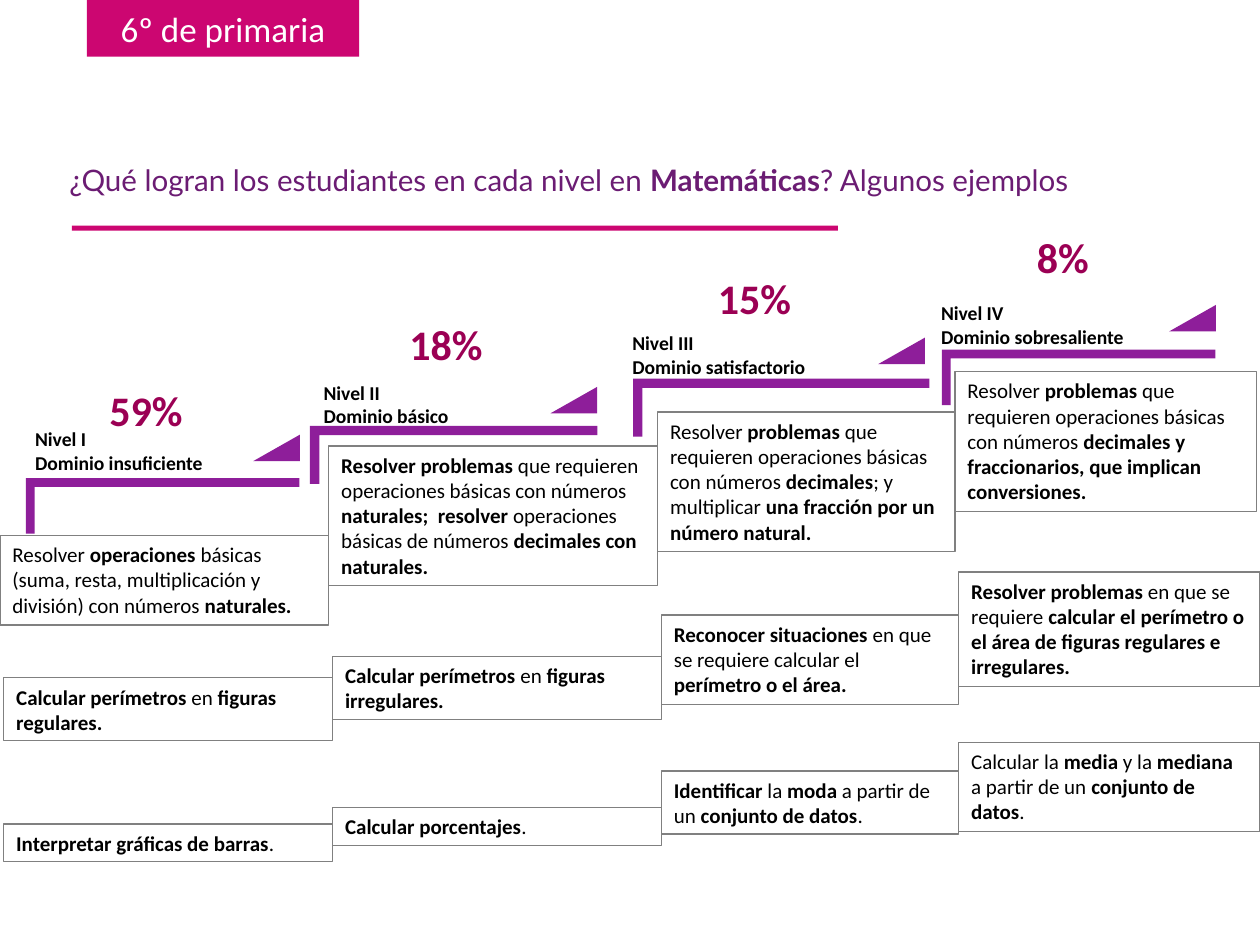
from itertools import accumulate

from pptx import Presentation
from pptx.dml.color import RGBColor
from pptx.enum.shapes import MSO_SHAPE
from pptx.enum.text import MSO_ANCHOR, MSO_AUTO_SIZE, PP_ALIGN
from pptx.util import Inches, Pt

PINK = RGBColor(0xCC, 0x06, 0x71)
WINE = RGBColor(0x9B, 0x00, 0x54)
PLUM = RGBColor(0x6B, 0x1C, 0x73)
PURPLE = RGBColor(0x8E, 0x1E, 0x9A)
GRAY = RGBColor(0x80, 0x80, 0x80)
BLACK = RGBColor(0, 0, 0)
WHITE = RGBColor(0xFF, 0xFF, 0xFF)

COLS, ROWS = 100, 75  # grid cells across and down the slide


class Board:
    """Holds the style and the current slide; lengths are grid cells."""

    styles = {
        "tag": ({"name": "Calibri", "size": Pt(20)}, WHITE),
        "title": ({"name": "Lato", "size": Pt(16.9)}, PLUM),
        "label": ({"name": "Calibri", "size": Pt(11.2), "bold": True}, BLACK),
        "share": ({"name": "Calibri", "size": Pt(24), "bold": True}, WINE),
        "body": ({"name": "Calibri", "size": Pt(12)}, BLACK),
    }

    def __init__(self, deck):
        self.slide = deck.slides.add_slide(deck.slide_layouts[5])
        self.col = deck.slide_width / COLS
        self.row = deck.slide_height / ROWS

    def place(self, x, y, w, h):
        return [round(n) for n in
                (x * self.col, y * self.row, w * self.col, h * self.row)]

    def letter(self, shape, text, style, align=PP_ALIGN.LEFT, **frame):
        """Fill a shape with text; parts between asterisks are bold."""
        fmt, color = self.styles[style]
        body = shape.text_frame
        frame = {"word_wrap": True, "vertical_anchor": MSO_ANCHOR.TOP,
                 "auto_size": MSO_AUTO_SIZE.SHAPE_TO_FIT_TEXT, **frame}
        for key, val in frame.items():
            setattr(body, key, val)
        for i, line in enumerate(text.split("\n")):
            para = body.add_paragraph() if i else body.paragraphs[0]
            para.alignment = align
            for j, part in enumerate(line.split("*")):
                if not part:
                    continue
                run = para.add_run()
                run.text = part
                for key, val in {"bold": j % 2 == 1, **fmt}.items():
                    setattr(run.font, key, val)
                run.font.color.rgb = color

    def title(self, text, *box):
        shape = self.slide.shapes.title
        for key, val in zip(("left", "top", "width", "height"),
                            self.place(*box)):
            setattr(shape, key, val)
        self.letter(shape, text, "title", auto_size=MSO_AUTO_SIZE.NONE)
        shape.text_frame.paragraphs[0].line_spacing = 0.9

    def shape(self, kind, box, fill=None, line=None, adjust=()):
        shape = self.slide.shapes.add_shape(kind, *self.place(*box))
        shape.shadow.inherit = False
        for i, val in enumerate(adjust):
            shape.adjustments[i] = val
        if fill is None:
            shape.fill.background()
        else:
            shape.fill.solid()
            shape.fill.fore_color.rgb = fill
        if line is None:
            shape.line.fill.background()
        else:
            shape.line.color.rgb = line
            shape.line.width = Pt(0.75)
        return shape

    def text(self, text, style, *box, **frame):
        shape = self.slide.shapes.add_textbox(*self.place(*box))
        self.letter(shape, text, style, **frame)

    def step(self, x, y, w, h):
        """An L shape turned a quarter, so that its frame is swapped."""
        box = (x + (w - h) / 2, y + (h - w) / 2, h, w)
        self.shape(MSO_SHAPE.CORNER, box, PURPLE,
                   adjust=(0.16, 0.16)).rotation = 90

    def flag(self, x, y):
        self.shape(MSO_SHAPE.ISOSCELES_TRIANGLE, (x, y, 3.7, 2.1), PURPLE,
                   adjust=(1,))

    def card(self, text, *box):
        shape = self.shape(MSO_SHAPE.RECTANGLE, box, line=GRAY)
        self.letter(shape, text, "body")


# Name, share, step box, flag place, label box, share box
LEVELS = [
    ("Nivel I\nDominio insuficiente", "59%", (2.05, 37.95, 21.7, 4.4),
     (20.1, 34.5), (1.8, 33.4, 18.9, 4.8), (7.7, 30, 8.6, 5)),
    ("Nivel II\nDominio básico", "18%", (24.6, 33.8, 22.8, 4.6),
     (43.7, 30.7), (24.7, 29.7, 16.3, 4.8), (31.5, 24.8, 8.6, 5)),
    ("Nivel III\nDominio satisfactorio", "15%", (50.25, 30.05, 23.5, 4.6),
     (69.7, 26.8), (49.2, 25.8, 19.8, 4.8), (56, 21.1, 8.6, 5)),
    ("Nivel IV\nDominio sobresaliente", "8%", (74.75, 27.75, 21.7, 4.4),
     (92.8, 24.2), (73.7, 23.4, 21.8, 4.8), (81.3, 17.9, 6.9, 5)),
]

# Each band: shift to the right, then top, height and text per level
WIDTHS = (26.1, 26.1, 23.6, 23.9)
BANDS = [
    (0, [
        (42.5, 7.1, "Resolver *operaciones *básicas (suma, resta, "
         "multiplicación y división) con números *naturales.*"),
        (35.4, 11.1, "*Resolver problemas* que requieren operaciones básicas "
         "con números *naturales;  resolver* operaciones básicas de números "
         "*decimales con naturales.*"),
        (32.7, 11.1, "Resolver *problemas *que requieren operaciones básicas "
         "con números *decimales*; y multiplicar *una fracción por un "
         "número natural.*"),
        (29.5, 11.1, "Resolver *problemas* que requieren operaciones básicas "
         "con números *decimales y fraccionarios, que implican "
         "conversiones.*"),
    ]),
    (0.3, [
        (53.8, 5, "*Calcular perímetros *en *figuras regulares.*"),
        (52.1, 5, "*Calcular perímetros *en *figuras irregulares.*"),
        (48.8, 7.1, "*Reconocer situaciones *en que se requiere calcular el "
         "*perímetro o el área.*"),
        (45.4, 9.1, "*Resolver problemas* en que se requiere* calcular el "
         "perímetro o el área de figuras regulares e irregulares.*"),
    ]),
    (0.3, [
        (65.4, 3, "*Interpretar gráficas de barras*."),
        (64.1, 3, "*Calcular porcentajes*."),
        (61.2, 5, "*Identificar* la *moda* a partir de un "
         "*conjunto de datos*."),
        (58.9, 7.1, "Calcular la *media* y la *mediana* a partir de un "
         "*conjunto de datos*."),
    ]),
]


def main():
    deck = Presentation()
    deck.slide_width, deck.slide_height = Inches(10), Inches(7.5)
    board = Board(deck)

    # Heading: grade tag, question and rule
    tag = board.shape(MSO_SHAPE.RECTANGLE, (6.9, 0, 21.6, 4.5), PINK)
    board.letter(tag, "6º de primaria", "tag", PP_ALIGN.CENTER,
                 vertical_anchor=MSO_ANCHOR.MIDDLE,
                 auto_size=MSO_AUTO_SIZE.NONE)
    board.title("¿Qué logran los estudiantes en cada nivel en *Matemáticas*? "
                "Algunos ejemplos", 4.5, 12.7, 88.3, 5.2)
    board.shape(MSO_SHAPE.RECTANGLE, (5.7, 17.9, 60.8, 0.4), PINK)

    # Staircase of levels
    for name, share, step, flag, label, spot in LEVELS:
        board.step(*step)
        board.flag(*flag)
        board.text(name, "label", *label)
        board.text(share, "share", *spot, word_wrap=False)

    # Example cards, one column per level
    lefts = accumulate(WIDTHS[:-1], initial=0)
    for i, (left, width) in enumerate(zip(lefts, WIDTHS)):
        for shift, cards in BANDS:
            top, height, text = cards[i]
            board.card(text, left + shift, top, width, height)

    deck.save("out.pptx")


if __name__ == "__main__":
    main()
